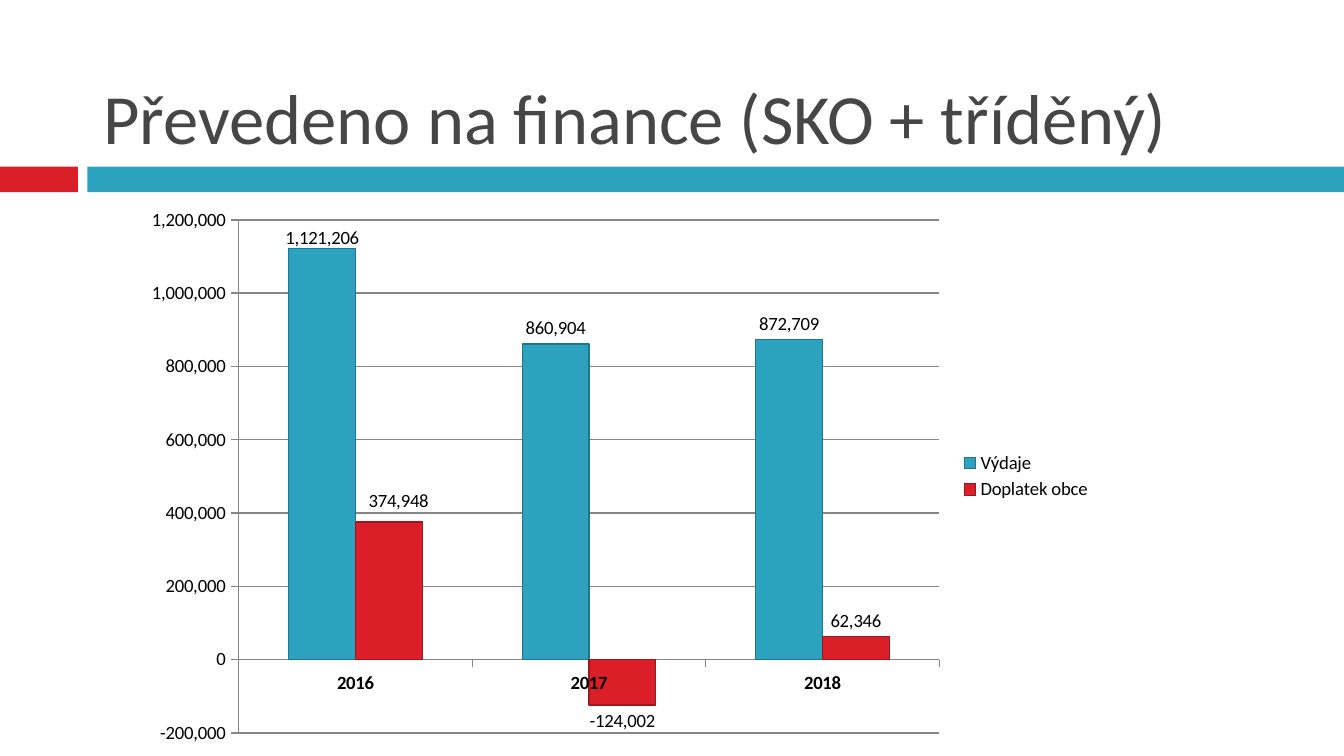
from dataclasses import dataclass

from pptx import Presentation
from pptx import util as u
from pptx.chart.data import CategoryChartData
from pptx.dml.color import RGBColor
from pptx.enum import chart as ch, shapes, text
from pptx.oxml import parse_xml
from pptx.oxml.ns import nsdecls


@dataclass(frozen=True)
class Theme:
    font: str = "Calibri"
    title_size: float = 37.8
    chart_size: float = 10
    title: str = "464646"
    body: str = "000000"
    white: str = "FFFFFF"
    grid: str = "868686"
    teal: str = "2DA2BF"
    teal_edge: str = "21768B"
    red: str = "DA1F28"
    red_edge: str = "A0161D"


T = Theme()


def rgb(value):
    return RGBColor.from_string(value)


def format_font(font, size=T.chart_size, color=T.body, bold=False):
    font.name, font.size, font.bold = T.font, u.Pt(size), bold
    font.color.rgb = rgb(color)


def write_text(tf, content, size, color, bold=False,
               align=text.PP_ALIGN.LEFT, anchor=text.MSO_ANCHOR.BOTTOM):
    tf.word_wrap = True
    tf.auto_size = text.MSO_AUTO_SIZE.NONE
    tf.vertical_anchor = anchor
    p = tf.paragraphs[0]
    p.alignment = align
    r = p.add_run()
    r.text = content
    format_font(r.font, size, color, bold)


def add_title(slide, box, content):
    sp = slide.shapes.title
    sp.left, sp.top, sp.width, sp.height = (u.Inches(v) for v in box)
    write_text(sp.text_frame, content, T.title_size, T.title)


def add_band(slide, box):
    """Red tab and teal bar, split by a narrow gap."""
    x, y, w, h = box
    tab, gap = 0.58, 0.07
    parts = ((x, tab, T.red), (x + tab + gap, w - tab - gap, T.teal))
    for left, width, color in parts:
        sp = slide.shapes.add_shape(
            shapes.MSO_SHAPE.RECTANGLE, u.Inches(left), u.Inches(y),
            u.Inches(width), u.Inches(h))
        sp.shadow.inherit = False
        sp.fill.solid()
        sp.fill.fore_color.rgb = rgb(color)
        sp.line.fill.background()


def manual_layout(x, y, w=None, h=None):
    """Layout in fractions of the chart; without a size it is an offset."""
    fields = [("x", x), ("y", y)]
    if w is not None:
        fields = [("layoutTarget", "inner"), ("xMode", "edge"),
                  ("yMode", "edge"), *fields, ("w", w), ("h", h)]
    inner = "".join(f'<c:{tag} val="{val}"/>' for tag, val in fields)
    return parse_xml(f'<c:layout {nsdecls("c")}><c:manualLayout>{inner}'
                     '</c:manualLayout></c:layout>')


def format_line(line, color):
    line.color.rgb = rgb(color)
    line.width = u.Pt(0.75)


def style_series(series, fill, edge, first_label_shift):
    series.invert_if_negative = False
    series.format.fill.solid()
    series.format.fill.fore_color.rgb = rgb(fill)
    format_line(series.format.line, edge)
    labels = series.data_labels
    labels.show_value = True
    first = series.points[0].data_label
    for label in (labels, first):
        label.position = ch.XL_LABEL_POSITION.OUTSIDE_END
        format_font(label.font)

    # The first label is nudged away from its default place
    idx = series._element.xpath("c:dLbls/c:dLbl/c:idx")[0]
    idx.addnext(manual_layout(*first_label_shift))


def style_axis(axis, bold=False):
    axis.major_tick_mark = ch.XL_TICK_MARK.OUTSIDE
    axis.minor_tick_mark = ch.XL_TICK_MARK.NONE
    format_line(axis.format.line, T.grid)
    format_font(axis.tick_labels.font, bold=bold)


def add_cost_chart(slide, box):
    data = CategoryChartData(number_format="#,##0")
    data.categories = ["2016", "2017", "2018"]
    data.add_series("Výdaje ", (1121206, 860904, 872709))
    data.add_series("Doplatek obce", (374948, -124002, 62346))
    chart = slide.shapes.add_chart(
        ch.XL_CHART_TYPE.COLUMN_CLUSTERED,
        *(u.Inches(v) for v in box), data).chart
    chart.has_title = False
    format_font(chart.font)

    # Bars
    plot = chart.plots[0]
    plot.gap_width, plot.overlap, plot.vary_by_categories = 150, 0, False
    styles = ((T.teal, T.teal_edge, (0, 0.01)),
              (T.red, T.red_edge, (0.01, -0.01)))
    for series, style in zip(plot.series, styles):
        style_series(series, *style)

    # Axes
    style_axis(chart.category_axis, bold=True)
    values = chart.value_axis
    style_axis(values)
    values.minimum_scale, values.maximum_scale = -200000, 1200000
    values.major_unit = 200000
    values.has_major_gridlines = True
    format_line(values.major_gridlines.format.line, T.grid)
    values.tick_labels.number_format = "#,##0"
    values.tick_labels.number_format_is_linked = False

    # Legend and plot area
    chart.has_legend = True
    chart.legend.position = ch.XL_LEGEND_POSITION.RIGHT
    chart.legend.include_in_layout = False
    format_font(chart.legend.font)
    area = chart._chartSpace.chart.plotArea
    for old in area.xpath("c:layout"):
        area.remove(old)
    area.insert(0, manual_layout(0.11, 0.04, 0.72, 0.92))
    area.append(parse_xml(
        f'<c:spPr {nsdecls("c", "a")}><a:solidFill>'
        f'<a:srgbClr val="{T.white}"/></a:solidFill></c:spPr>'))


def main():
    prs = Presentation()
    # Widescreen, 16 to 9
    width = 10
    prs.slide_width = u.Inches(width)
    prs.slide_height = u.Inches(width * 9 / 16)
    slide = prs.slides.add_slide(prs.slide_layouts[5])
    add_band(slide, (0, 1.24, width, 0.19))
    add_title(slide, (0.67, 0.13, 8.92, 1.1),
              "Převedeno na finance (SKO + tříděný)")
    add_cost_chart(slide, (0.98, 1.47, 7.24, 4.15))
    prs.save("out.pptx")


if __name__ == "__main__":
    main()
